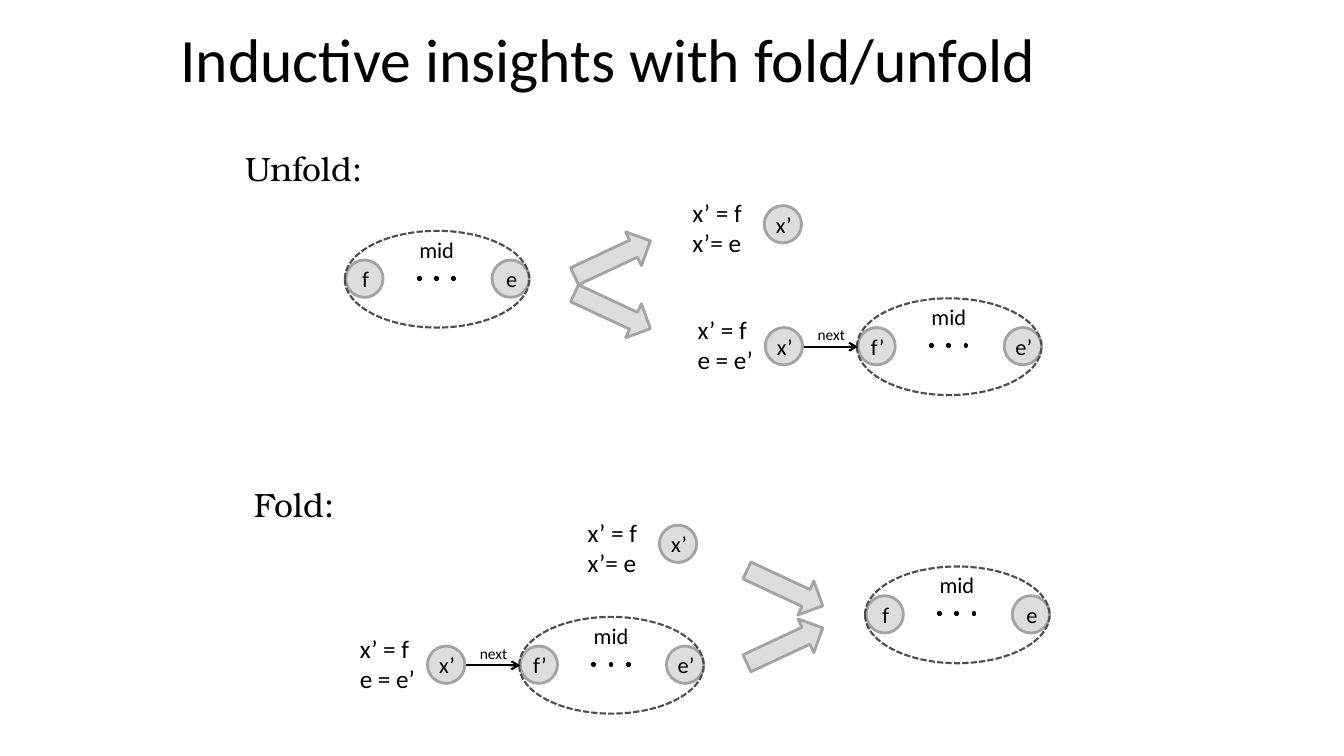
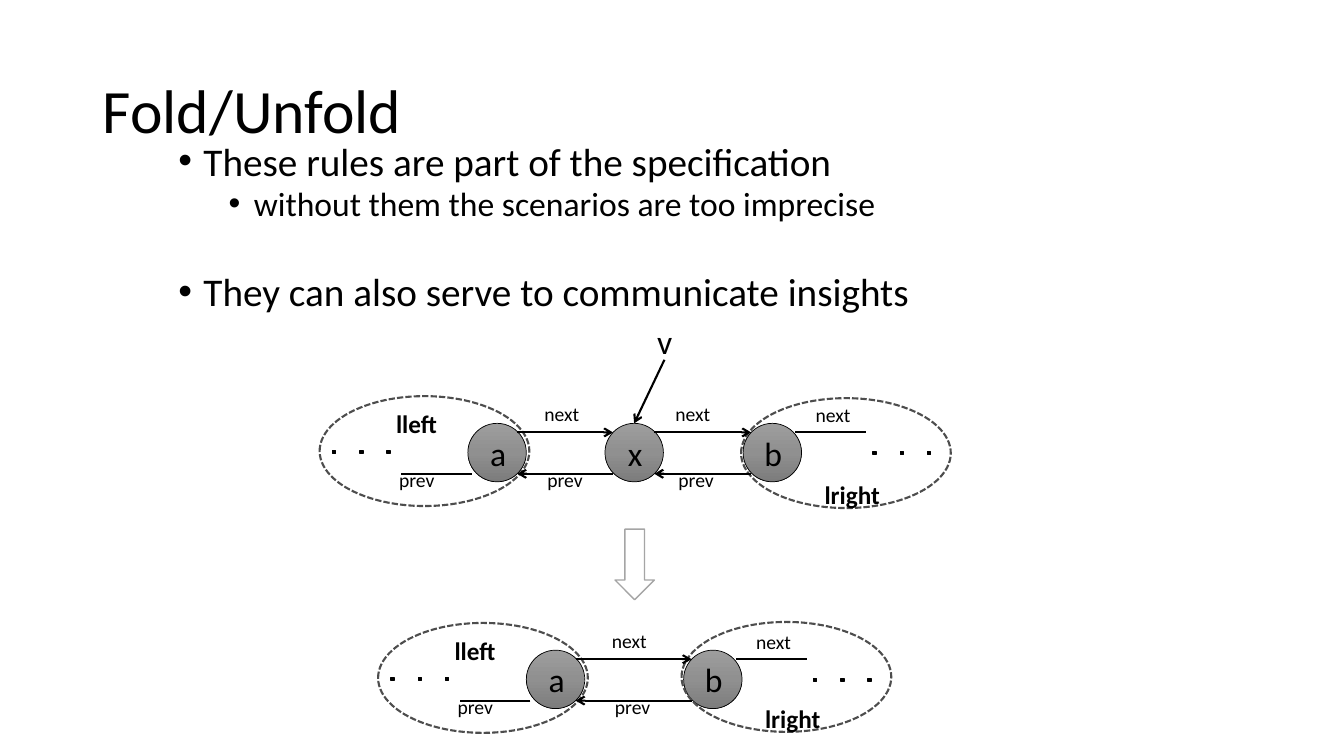
import copy

import pptx
import pptx.dml.color
import pptx.enum.dml
import pptx.enum.shapes
import pptx.enum.text
import pptx.oxml
import pptx.oxml.ns
import pptx.util

Inches = pptx.util.Inches
Pt = pptx.util.Pt
SHAPES = pptx.enum.shapes.MSO_SHAPE
ALIGN = pptx.enum.text.PP_ALIGN
ANCHOR = pptx.enum.text.MSO_ANCHOR
AUTO_SIZE = pptx.enum.text.MSO_AUTO_SIZE

COLORS = {
    "text": "000000",
    "node": "DDDDDD",
    "node_edge": "A3A3A3",
    "outline": "4D4D4D",
    "step": "FFFFFF",
    "step_edge": "A5A5A5",
    "shade_top": "9D9D9D",
    "shade_middle": "909090",
    "shade_bottom": "7C7C7C",
}
BODY_FONT = "Calibri"
HEADING_FONT = "TeX Gyre Bonum"
TITLE_FRAME = {"vertical_anchor": ANCHOR.MIDDLE, "auto_size": AUTO_SIZE.NONE, "word_wrap": True}
LABEL_FRAME = {"word_wrap": False, "auto_size": AUTO_SIZE.SHAPE_TO_FIT_TEXT}
NODE_FRAME = {
    "vertical_anchor": ANCHOR.MIDDLE,
    "margin_left": Inches(0.02),
    "margin_right": 0,
}


def color(name):
    return pptx.dml.color.RGBColor.from_string(COLORS[name])


def apply(target, formats):
    for attribute, value in formats.items():
        setattr(target, attribute, value)


def write(paragraph, text, size, font=BODY_FONT, bold=False):
    run = paragraph.add_run()
    run.text = text
    apply(run.font, {"size": Pt(size), "name": font, "bold": bold})
    run.font.color.rgb = color("text")


def add_title(slide, text, left, top, width, height):
    title = slide.shapes.title
    box = {"left": left, "top": top, "width": width, "height": height}
    apply(title, {side: Inches(value) for side, value in box.items()})
    apply(title.text_frame, TITLE_FRAME)
    paragraph = title.text_frame.paragraphs[0]
    apply(paragraph, {"alignment": ALIGN.LEFT, "line_spacing": 0.9})
    write(paragraph, text, 44)


def add_label(slide, lines, left, top, width, height, size, **style):
    box = slide.shapes.add_textbox(Inches(left), Inches(top), Inches(width), Inches(height))
    apply(box.text_frame, LABEL_FRAME)
    for index, line in enumerate(lines):
        frame = box.text_frame
        paragraph = frame.add_paragraph() if index else frame.paragraphs[0]
        write(paragraph, line, size, **style)


def add_figure(slide, preset, left, top, width, height, fill, edge, weight):
    figure = slide.shapes.add_shape(
        preset, Inches(left), Inches(top), Inches(width), Inches(height))
    figure.shadow.inherit = False
    if fill:
        figure.fill.solid()
        figure.fill.fore_color.rgb = color(fill)
    else:
        figure.fill.background()
    figure.line.color.rgb = color(edge)
    figure.line.width = Pt(weight)
    return figure


def add_outline(slide, left, top, width, height):
    outline = add_figure(slide, SHAPES.OVAL, left, top, width, height, None, "outline", 1.5)
    outline.line.dash_style = pptx.enum.dml.MSO_LINE.SQUARE_DOT


def add_dots(slide, lefts, top, side, weight):
    for left in lefts:
        add_figure(slide, SHAPES.RECTANGLE, left, top, side, side, "text", "text", weight)


def add_link(slide, start, end, arrow=True):
    link = slide.shapes.add_connector(
        pptx.enum.shapes.MSO_CONNECTOR.STRAIGHT, *map(Inches, start + end))
    link.line.color.rgb = color("text")
    link.line.width = Pt(1.5)
    properties = link._element.spPr
    if arrow:
        tail = pptx.oxml.parse_xml(
            f'<a:tailEnd {pptx.oxml.ns.nsdecls("a")} type="arrow"/>')
        link.line._get_or_add_ln().append(tail)
    properties.append(pptx.oxml.parse_xml(f'<a:effectLst {pptx.oxml.ns.nsdecls("a")}/>'))
    return link


def label_node(node, text, size):
    apply(node.text_frame, NODE_FRAME)
    paragraph = node.text_frame.paragraphs[0]
    paragraph.alignment = ALIGN.CENTER
    write(paragraph, text, size)


def add_node(slide, text, left, top):
    node = add_figure(slide, SHAPES.OVAL, left, top, 0.37, 0.37, "node", "node_edge", 2)
    label_node(node, text, 16)


def add_shaded_node(slide, text, left, top):
    node = add_figure(slide, SHAPES.OVAL, left, top, 0.58, 0.58, "node", "text", 0.5)
    node.fill.gradient()
    node.fill.gradient_angle = 270
    stops = node._element.spPr.find(".//" + pptx.oxml.ns.qn("a:gsLst"))
    stops.insert(1, copy.deepcopy(stops[0]))
    shades = ("shade_top", "shade_middle", "shade_bottom")
    for index, (stop, shade) in enumerate(zip(node.fill.gradient_stops, shades)):
        stop.color.rgb = color(shade)
        stop.position = index / 2
    label_node(node, text, 24)
    return node


def add_segment(slide, first, last, left, top):
    add_node(slide, first, left + 0.01, top + 0.29)
    add_node(slide, last, left + 1.46, top + 0.29)
    add_dots(slide, [left + 0.73 + 0.17 * i for i in range(3)], top + 0.46, 0.02, 2)
    add_label(slide, ["mid"], left + 0.64, top, 0.55, 0.37, 16)
    add_outline(slide, left, top, 1.83, 0.96)


def add_linked_segment(slide, left, top):
    add_segment(slide, "f’", "e’", left, top)
    add_node(slide, "x’", left - 0.91, top + 0.29)
    add_link(slide, (left - 0.53, top + 0.48), (left + 0.01, top + 0.48))
    add_label(slide, ["next"], left - 0.49, top + 0.22, 0.48, 0.29, 11)
    add_label(slide, ["x’ = f", "e = e’"], left - 1.68, top + 0.11, 0.76, 0.71, 18)


def add_single_node(slide, left, top):
    add_node(slide, "x’", left, top)
    add_label(slide, ["x’ = f", "x’= e"], left - 0.81, top - 0.13, 0.76, 0.71, 18)


def add_rule_arrow(slide, left, top, rotation):
    arrow = add_figure(
        slide, SHAPES.RIGHT_ARROW, left, top, 0.83, 0.37, "node", "node_edge", 2)
    arrow.rotation = rotation


def add_pointer_label(slide, text, left, top):
    add_label(slide, [text], left, top, 0.55, 0.34, 14)


def add_left_list(slide, left, top):
    add_shaded_node(slide, "a", left, top)
    add_link(slide, (left + 0.04, top + 0.5), (left - 0.66, top + 0.5), arrow=False)
    add_pointer_label(slide, "prev", left - 0.78, top + 0.39)
    add_dots(slide, [left - 1.34 + 0.27 * i for i in range(3)], top + 0.27, 0.03, 1)
    add_outline(slide, left - 1.47, top - 0.27, 2.08, 1.09)
    add_label(slide, ["lleft"], left - 0.81, top - 0.2, 0.62, 0.4, 18, bold=True)


def add_right_list(slide, left, top, rise):
    add_shaded_node(slide, "b", left, top)
    add_link(slide, (left + 0.52, top + 0.09), (left + 1.22, top + 0.09), arrow=False)
    add_pointer_label(slide, "next", left + 0.62, top - 0.25)
    add_dots(slide, [left + 1.29 + 0.27 * i for i in range(3)], top + 0.28, 0.03, 1)
    add_outline(slide, left - 0.02, top - 0.25 - rise, 2.08, 1.09)
    add_label(slide, ["lright"], left + 0.71, top + 0.51 - rise, 0.76, 0.4, 18, bold=True)


def add_double_link(slide, left, right, top, label_left):
    start, end = left + 0.49, right + 0.08
    add_link(slide, (start, top + 0.09), (end, top + 0.09))
    add_pointer_label(slide, "next", label_left, top - 0.26)
    add_link(slide, (end, top + 0.5), (start, top + 0.5))
    add_pointer_label(slide, "prev", label_left + 0.03, top + 0.39)


def add_bullets(slide, items, left, top, width, height):
    box = slide.shapes.add_textbox(Inches(left), Inches(top), Inches(width), Inches(height))
    frame = box.text_frame
    frame.word_wrap = True
    for index, (text, level, size, space) in enumerate(items):
        paragraph = frame.add_paragraph() if index else frame.paragraphs[0]
        apply(paragraph, {"level": level, "line_spacing": 0.8, "space_before": Pt(space)})
        properties = paragraph._p.get_or_add_pPr()
        properties.set("marL", str(Inches(0.25 + 0.5 * level)))
        properties.set("indent", str(Inches(-0.25)))
        for bullet in ('buFont {} typeface="Arial"', 'buChar {} char="•"'):
            tag = bullet.format(pptx.oxml.ns.nsdecls("a"))
            properties.append(pptx.oxml.parse_xml(f"<a:{tag}/>"))
        write(paragraph, text, size)


def build_insights(slide):
    add_title(slide, "Inductive insights with fold/unfold", 1.69, 0, 9.97, 1.25)

    add_label(slide, ["Unfold:"], 2.33, 1.42, 1.4, 0.5, 24, font=HEADING_FONT)
    add_segment(slide, "f", "e", 3.42, 2.29)
    add_rule_arrow(slide, 5.66, 2.9, 25)
    add_rule_arrow(slide, 5.66, 2.38, 335)
    add_single_node(slide, 7.58, 2.04)
    add_linked_segment(slide, 8.5, 2.96)

    add_label(slide, ["Fold:"], 2.42, 4.75, 1.02, 0.5, 24, font=HEADING_FONT)
    add_single_node(slide, 6.54, 5.21)
    add_linked_segment(slide, 5.15, 6.12)
    add_rule_arrow(slide, 7.37, 5.65, 25)
    add_rule_arrow(slide, 7.37, 6.22, 335)
    add_segment(slide, "f", "e", 8.58, 5.62)


def build_rules(slide):
    add_title(slide, "Fold/Unfold", 0.92, 0.4, 11.5, 1.45)
    add_bullets(slide, [
        ("These rules are part of the specification", 0, 28, 0),
        ("without them the scenarios are too imprecise", 1, 24, 5),
        ("They can also serve to communicate insights", 0, 28, 38.4),
    ], 1.67, 1.4, 9.83, 1.94)

    a_left, x_left, b_left, top = 4.64, 6, 7.37, 4.2
    add_left_list(slide, a_left, top)
    add_right_list(slide, b_left, top, 0)
    x_node = add_shaded_node(slide, "x", x_left, top)
    add_double_link(slide, a_left, x_left, top, 5.3)
    add_double_link(slide, x_left, b_left, top, 6.6)
    add_label(slide, ["v"], 6.42, 3.13, 0.35, 0.5, 24)
    add_link(slide, (6.59, 3.57), (6.29, 4.2)).end_connect(x_node, 0)

    add_figure(slide, SHAPES.DOWN_ARROW, 6.1, 5.25, 0.39, 0.7, "step", "step_edge", 1)

    a_left, b_left, top = 5.22, 6.78, 6.45
    add_left_list(slide, a_left, top)
    add_right_list(slide, b_left, top, 0.03)
    add_double_link(slide, a_left, b_left, top, 5.97)


def main():
    deck = pptx.Presentation()
    apply(deck, {"slide_width": Inches(13.33), "slide_height": Inches(7.5)})
    for build in (build_insights, build_rules):
        build(deck.slides.add_slide(deck.slide_layouts[5]))
    deck.save("out.pptx")


if __name__ == "__main__":
    main()
